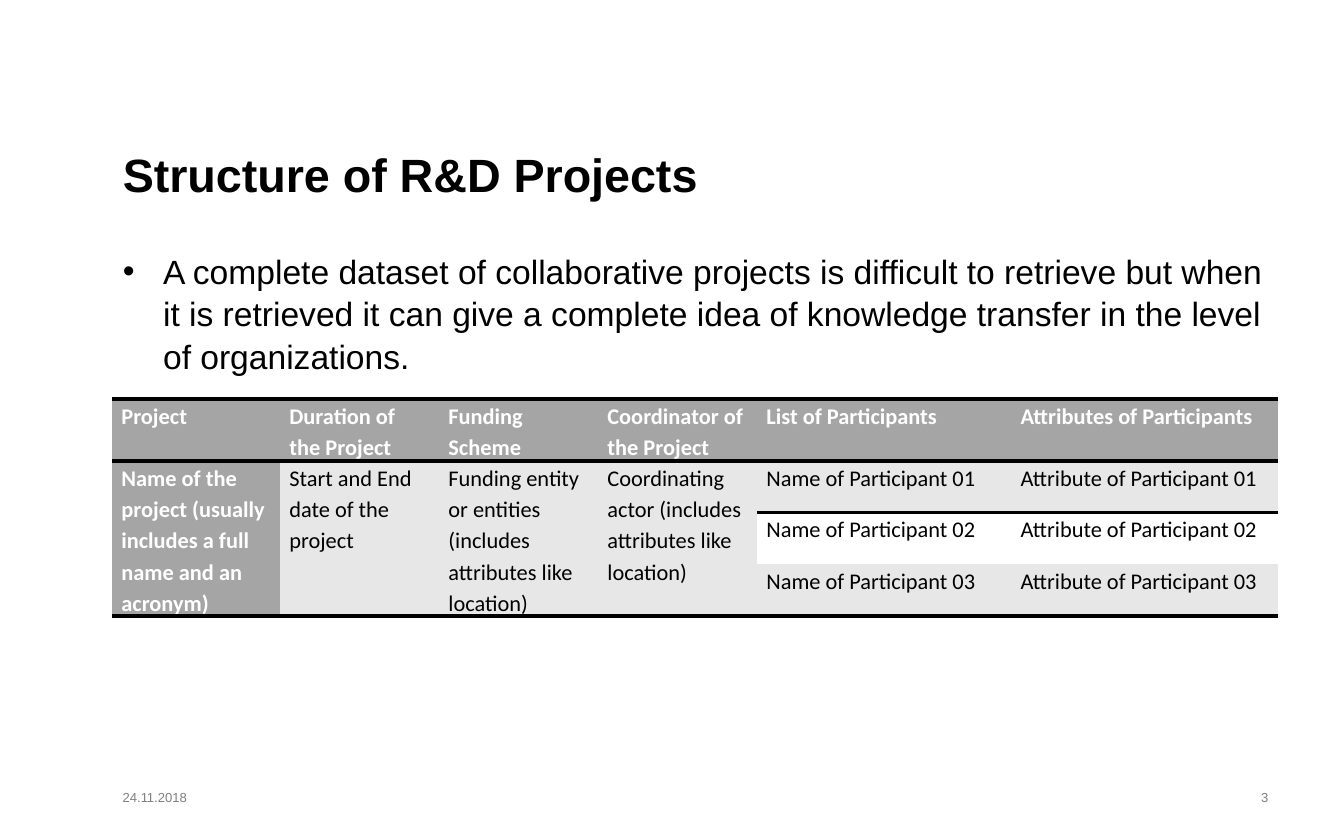
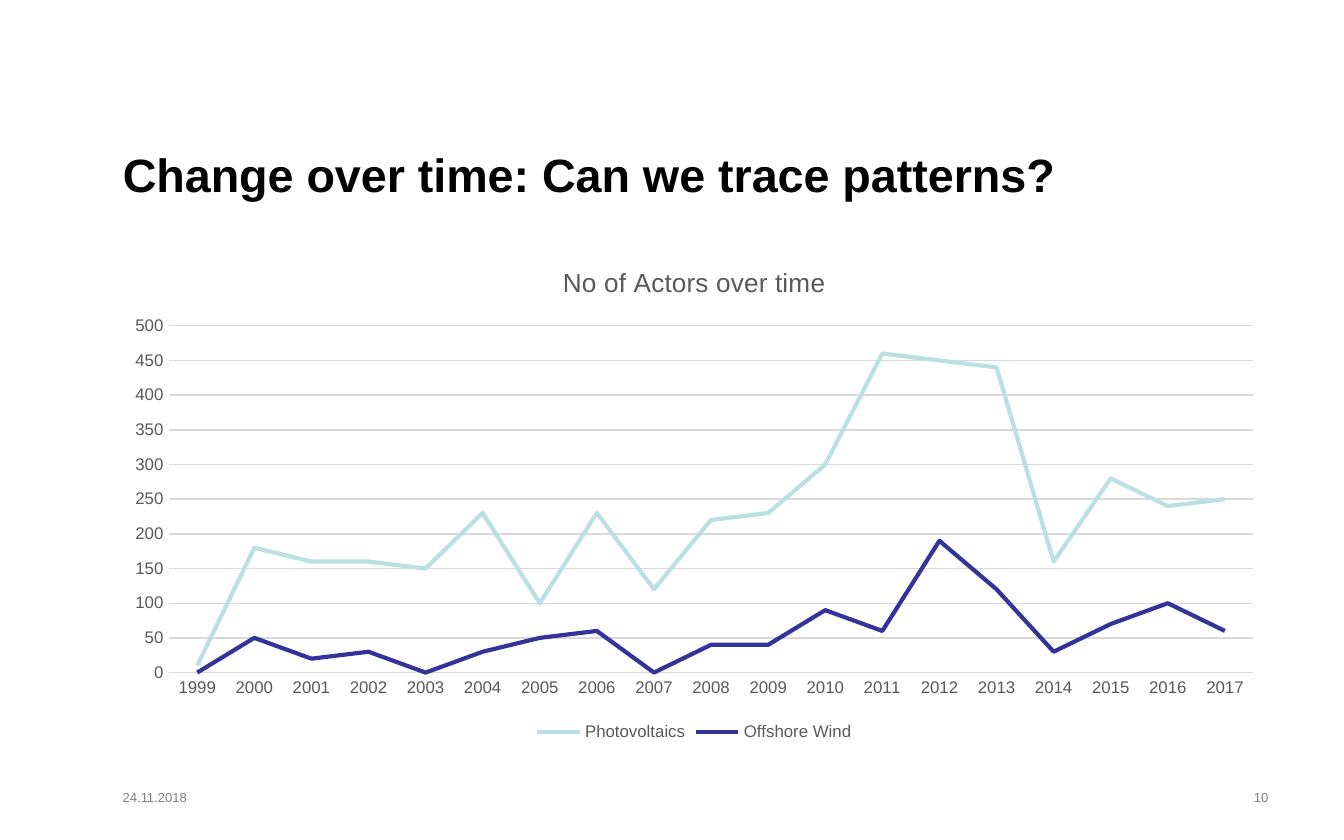
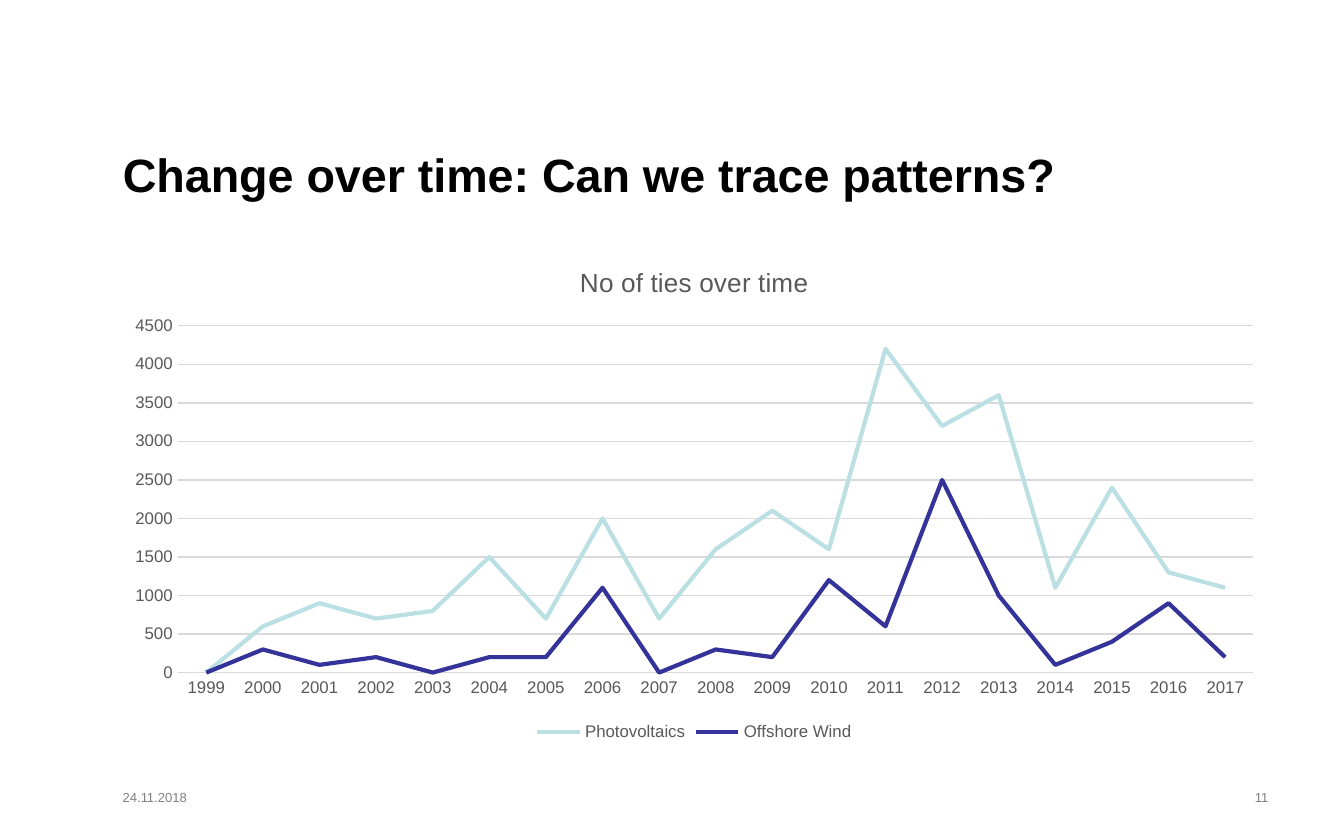
from lxml.etree import SubElement
from pptx import Presentation
from pptx.chart.data import CategoryChartData
from pptx.dml.color import RGBColor
from pptx.enum.chart import XL_CHART_TYPE, XL_LEGEND_POSITION, XL_TICK_MARK
from pptx.enum.text import MSO_ANCHOR, PP_ALIGN
from pptx.oxml.ns import qn
from pptx.util import Emu, Inches, Pt

BLACK = RGBColor(0x00, 0x00, 0x00)
WHITE = RGBColor(0xFF, 0xFF, 0xFF)
FOOTER_GREY = RGBColor(0x80, 0x80, 0x80)
HEADER_GREY = RGBColor(0xA5, 0xA5, 0xA5)
BAND_GREY = RGBColor(0xE7, 0xE7, 0xE7)
LABEL_GREY = RGBColor(0x59, 0x59, 0x59)
GRID_GREY = RGBColor(0xD9, 0xD9, 0xD9)
PALE_TEAL = RGBColor(0xBB, 0xE0, 0xE3)
INDIGO = RGBColor(0x33, 0x33, 0x99)

GRID_COUNT = 12  # columns and rows on a slide
LEFT, CONTENT_TOP, CONTENT_WIDTH = 1, 3.48, 10.4
NO_GRID_STYLE = "{2D5ABB26-0587-4C30-8999-92F81FD0307C}"

TITLE = {"name": "Arial", "size": Pt(25), "bold": True, "color": BLACK}
BODY = {"name": "Arial", "size": Pt(18), "color": BLACK}
FOOTER = {"name": "Arial", "size": Pt(7), "color": FOOTER_GREY}
CHART_TITLE = {"name": "Arial", "size": Pt(14), "bold": False, "color": LABEL_GREY}
CHART_LABEL = {"name": "Arial", "size": Pt(9), "color": LABEL_GREY}
TABLE_HEADER = {"name": "Calibri", "size": Pt(12), "bold": True, "color": WHITE}
TABLE_BODY = {**TABLE_HEADER, "bold": False, "color": BLACK}
FRAME = {
    "word_wrap": True,
    "margin_left": Inches(0.08),
    "margin_right": Inches(0.08),
    "margin_top": Inches(0.04),
    "margin_bottom": Inches(0.04),
}
CELL = {
    "margin_left": Inches(0.07),
    "margin_right": Inches(0.07),
    "margin_top": 0,
    "margin_bottom": 0,
}

DATE = "24.11.2018"
STATEMENT = (
    "A complete dataset of collaborative projects is difficult to retrieve but when "
    "it is retrieved it can give a complete idea of knowledge transfer in the level "
    "of organizations."
)
PROJECT_ROWS = [
    ["Project", "Duration of the Project", "Funding Scheme",
     "Coordinator of the Project", "List of Participants", "Attributes of Participants"],
    ["Name of the project (usually includes a full name and an acronym)",
     "Start and End date of the project",
     "Funding entity or entities (includes attributes like location)",
     "Coordinating actor (includes attributes like location)",
     "Name of Participant 01", "Attribute of Participant 01"],
    ["", "", "", "", "Name of Participant 02", "Attribute of Participant 02"],
    ["", "", "", "", "Name of Participant 03", "Attribute of Participant 03"],
]
MERGED_COLUMNS = 4
COLUMN_WIDTHS = [1.5, 1.42, 1.42, 1.42, 2.27, 2.38]
ROW_HEIGHTS = [0.83, 0.74, 0.74, 0.74]

YEARS = [str(year) for year in range(1999, 2018)]
SERIES_COLORS = {"Photovoltaics": PALE_TEAL, "Offshore Wind": INDIGO}
TREND_TITLE = "Change over time: Can we trace patterns?"
TRENDS = [
    (10, "No of Actors over time", 500, 50, [
        [10, 180, 160, 160, 150, 230, 100, 230, 120, 220, 230, 300, 460, 450, 440,
         160, 280, 240, 250],
        [0, 50, 20, 30, 0, 30, 50, 60, 0, 40, 40, 90, 60, 190, 120, 30, 70, 100, 60],
    ]),
    (11, "No of ties over time", 4500, 500, [
        [0, 600, 900, 700, 800, 1500, 700, 2000, 700, 1600, 2100, 1600, 4200, 3200,
         3600, 1100, 2400, 1300, 1100],
        [0, 300, 100, 200, 0, 200, 200, 1100, 0, 300, 200, 1200, 600, 2500, 1000,
         100, 400, 900, 200],
    ]),
]


def set_format(target, values):
    for name, value in values.items():
        if name == "color":
            target.color.rgb = value
        else:
            setattr(target, name, value)


def add_border(cell, side):
    """Draw a black rule on one side of a cell; call before filling the cell."""
    properties = cell._tc.get_or_add_tcPr()
    line = SubElement(properties, qn(f"a:ln{side}"), w=str(Pt(2)))
    fill = SubElement(line, qn("a:solidFill"))
    SubElement(fill, qn("a:srgbClr"), val=str(BLACK))


def add_bullet(paragraph):
    properties = paragraph._p.get_or_add_pPr()
    properties.set("marL", str(Inches(0.3)))
    properties.set("indent", str(-Inches(0.3)))
    SubElement(properties, qn("a:buFont"), typeface="Arial")
    SubElement(properties, qn("a:buChar"), char="•")


class DeckBuilder:
    """Holds the deck, its grid and the slide being built."""

    def __init__(self):
        self.deck = Presentation()
        self.deck.slide_width = Inches(10)
        self.deck.slide_height = Inches(6.25)
        self.slide = None

    def columns(self, count):
        return Emu(round(self.deck.slide_width * count / GRID_COUNT))

    def rows(self, count):
        return Emu(round(self.deck.slide_height * count / GRID_COUNT))

    def area(self, left, top, width, height):
        return self.columns(left), self.rows(top), self.columns(width), self.rows(height)

    def start_slide(self, title, number):
        self.slide = self.deck.slides.add_slide(self.deck.slide_layouts[5])
        box = self.slide.shapes.title
        box.left, box.top, box.width, box.height = self.area(LEFT, 1.48, CONTENT_WIDTH, 2)
        self.fill_frame(box.text_frame, title, TITLE)
        box.text_frame.vertical_anchor = MSO_ANCHOR.MIDDLE
        self.text(DATE, (LEFT, 11.2, 2.5, 0.8), FOOTER)
        self.text(str(number), (10.52, 11.2, 0.9, 0.8), FOOTER, PP_ALIGN.RIGHT)

    def fill_frame(self, frame, content, font, alignment=PP_ALIGN.LEFT):
        set_format(frame, FRAME)
        paragraph = frame.paragraphs[0]
        paragraph.alignment = alignment
        span = paragraph.add_run()
        span.text = content
        set_format(span.font, font)
        return paragraph

    def text(self, content, place, font, alignment=PP_ALIGN.LEFT):
        box = self.slide.shapes.add_textbox(*self.area(*place))
        return self.fill_frame(box.text_frame, content, font, alignment)

    def bullet(self, content, place):
        paragraph = self.text(content, place, BODY)
        add_bullet(paragraph)
        paragraph.line_spacing = 1.05

    def table(self, content, top):
        place = self.area(LEFT, top, sum(COLUMN_WIDTHS), sum(ROW_HEIGHTS))
        frame = self.slide.shapes.add_table(len(content), len(content[0]), *place)
        table = frame.table
        table.horz_banding = False
        frame._element.find(f".//{qn('a:tableStyleId')}").text = NO_GRID_STYLE
        for column, width in zip(table.columns, COLUMN_WIDTHS):
            column.width = self.columns(width)
        for row, height in zip(table.rows, ROW_HEIGHTS):
            row.height = self.rows(height)
        last = len(content) - 1
        for column in range(MERGED_COLUMNS):
            table.cell(1, column).merge(table.cell(last, column))
        for row, texts in enumerate(content):
            for column, words in enumerate(texts):
                self.cell(table.cell(row, column), words, row, column, last)

    def cell(self, cell, words, row, column, last):
        if row <= 1:
            add_border(cell, "T")
        if row in (0, last) or cell.is_merge_origin:
            add_border(cell, "B")
        heading = row == 0 or column == 0
        plain = row == 2 and column >= MERGED_COLUMNS
        cell.fill.solid()
        cell.fill.fore_color.rgb = HEADER_GREY if heading else WHITE if plain else BAND_GREY
        set_format(cell, CELL)
        if words:
            paragraph = cell.text_frame.paragraphs[0]
            paragraph.line_spacing = 1.15
            span = paragraph.add_run()
            span.text = words
            set_format(span.font, TABLE_HEADER if heading else TABLE_BODY)

    def line_chart(self, title, maximum, step, series_values):
        data = CategoryChartData()
        data.categories = YEARS
        for name, values in zip(SERIES_COLORS, series_values):
            data.add_series(name, values)
        place = self.area(LEFT, CONTENT_TOP, CONTENT_WIDTH, 7.2)
        chart = self.slide.shapes.add_chart(XL_CHART_TYPE.LINE, *place, data).chart
        set_format(chart.font, {**CHART_LABEL, "size": Pt(10), "color": BLACK})

        chart.has_title = True
        span = chart.chart_title.text_frame.paragraphs[0].add_run()
        span.text = title
        set_format(span.font, CHART_TITLE)

        chart.has_legend = True
        chart.legend.position = XL_LEGEND_POSITION.BOTTOM
        chart.legend.include_in_layout = False
        set_format(chart.legend.font, CHART_LABEL)

        years, amounts = chart.category_axis, chart.value_axis
        for axis in (years, amounts):
            axis.major_tick_mark = axis.minor_tick_mark = XL_TICK_MARK.NONE
            set_format(axis.tick_labels.font, CHART_LABEL)
        set_format(amounts, {"minimum_scale": 0, "maximum_scale": maximum,
                             "major_unit": step, "has_major_gridlines": True})
        amounts.format.line.fill.background()
        for line in (years.format.line, amounts.major_gridlines.format.line):
            set_format(line, {"color": GRID_GREY, "width": Pt(0.75)})

        plot = chart.plots[0]
        plot.vary_by_categories = False
        for series, color in zip(plot.series, SERIES_COLORS.values()):
            series.smooth = False
            set_format(series.format.line, {"color": color, "width": Pt(2.25)})


def main():
    builder = DeckBuilder()
    builder.start_slide("Structure of R&D Projects", 3)
    builder.bullet(STATEMENT, (LEFT, CONTENT_TOP, CONTENT_WIDTH, 1.79))
    builder.table(PROJECT_ROWS, 5.7)
    for number, title, maximum, step, series_values in TRENDS:
        builder.start_slide(TREND_TITLE, number)
        builder.line_chart(title, maximum, step, series_values)
    builder.deck.save("out.pptx")


if __name__ == "__main__":
    main()
